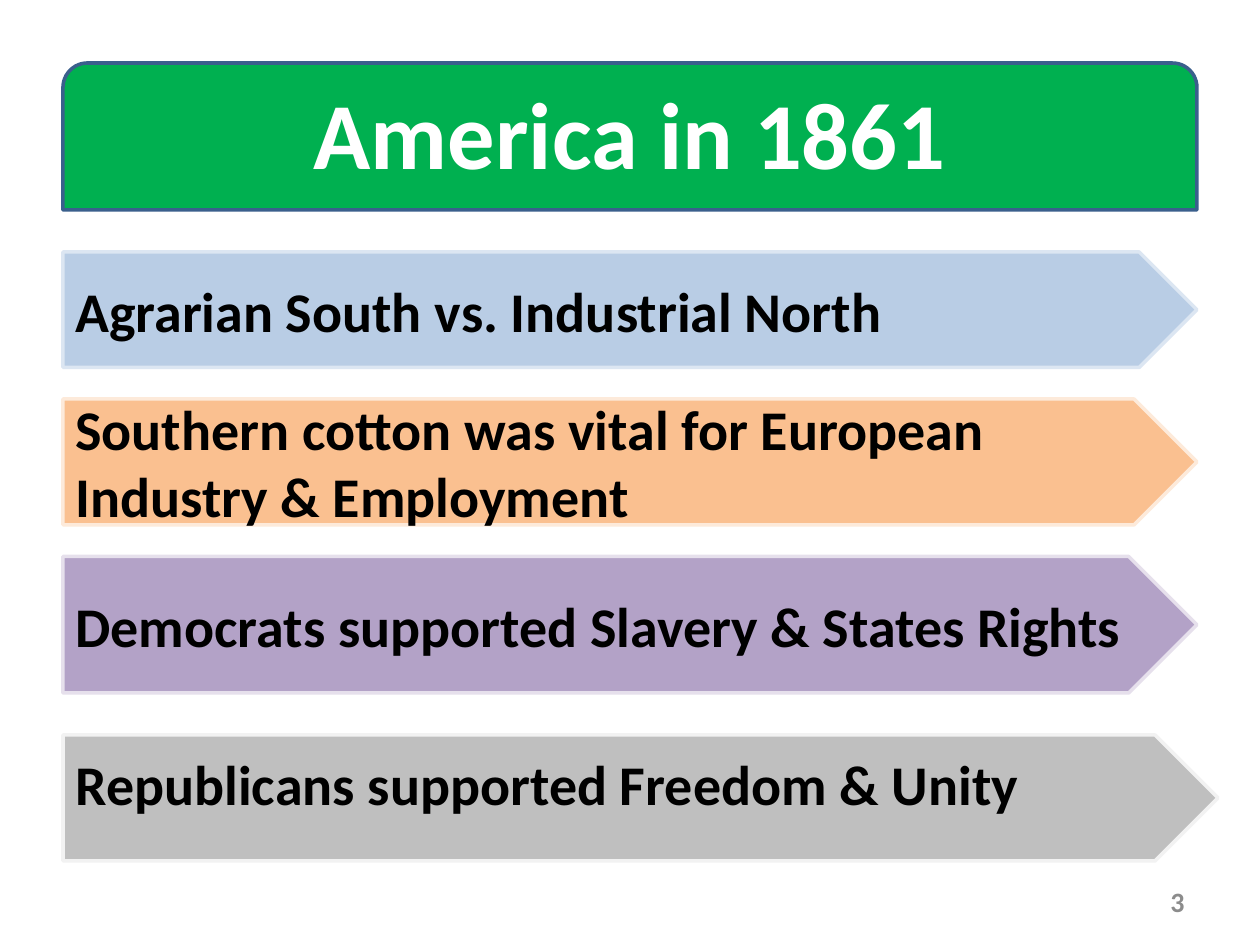
from pptx import Presentation
from pptx import util as u
from pptx.dml.color import RGBColor
from pptx.enum import shapes, text

SCALE = 7620
FONT = "Calibri"
ARROWS = [
    ((60, 240, 1080, 110), "B9CDE5", "DCE6F2", "Agrarian South vs. Industrial North"),
    ((60, 380, 1080, 120), "FAC090", "FDEADA",
     "Southern cotton was vital for European Industry & Employment"),
    ((60, 530, 1080, 130), "B3A2C7", "E6E0EC", "Democrats supported Slavery & States Rights"),
    ((60, 700, 1100, 120), "BFBFBF", "F2F2F2", "Republicans supported Freedom & Unity"),
]


def px(length):
    """Turn a length in px into EMU."""
    return u.Emu(length * SCALE)


def color(value):
    """Turn a hex string into a colour."""
    return RGBColor.from_string(value)


def write(shape, words, size, font_color, alignment, anchor=text.MSO_ANCHOR.MIDDLE):
    """Put one bold paragraph into a shape."""
    frame = shape.text_frame
    frame.text = words
    frame.word_wrap = True
    frame.auto_size = text.MSO_AUTO_SIZE.NONE
    frame.vertical_anchor = anchor
    paragraph = frame.paragraphs[0]
    paragraph.alignment = alignment
    font = paragraph.runs[0].font
    font.name, font.size, font.bold = FONT, u.Pt(size), True
    font.color.rgb = color(font_color)


def add_panel(slide, kind, box, fill, line):
    """Add a filled and outlined preset shape."""
    shape = slide.shapes.add_shape(kind, *map(px, box))
    shape.shadow.inherit = False
    shape.fill.solid()
    shape.fill.fore_color.rgb = color(fill)
    shape.line.color.rgb = color(line)
    shape.line.width = u.Pt(2)
    return shape


def add_banner(slide, box):
    """Add the green banner with the title in front of it."""
    left, top, width, height = box
    banner = add_panel(slide, shapes.MSO_SHAPE.ROUND_2_SAME_RECTANGLE, box, "00B050", "3A5F8C")
    title = slide.shapes.title
    title.left, title.top, title.width, title.height = map(
        px, (left, top - 10, width, height + 10))
    write(title, "America in 1861", 54, "FFFFFF", text.PP_ALIGN.CENTER)
    banner._element.addnext(title._element)


def add_arrows(slide):
    """Add the arrow bars, the last one with its text raised from the bottom."""
    for box, fill, line, words in ARROWS:
        arrow = add_panel(slide, shapes.MSO_SHAPE.PENTAGON, box, fill, line)
        write(arrow, words, 32, "000000", text.PP_ALIGN.LEFT)
    arrow.text_frame.vertical_anchor = text.MSO_ANCHOR.BOTTOM
    arrow.text_frame.margin_bottom = px(42)


def add_page_number(slide, box):
    """Add the page number at the lower right."""
    number = slide.shapes.add_textbox(*map(px, box))
    write(number, "3", 16, "8C8C8C", text.PP_ALIGN.RIGHT)


def main():
    """Build and save the slide."""
    presentation = Presentation()
    presentation.slide_width, presentation.slide_height = px(1200), px(900)
    slide = presentation.slides.add_slide(presentation.slide_layouts[5])
    add_banner(slide, (60, 60, 1080, 140))
    add_page_number(slide, (860, 834, 280, 48))
    add_arrows(slide)
    presentation.save("out.pptx")


if __name__ == "__main__":
    main()
